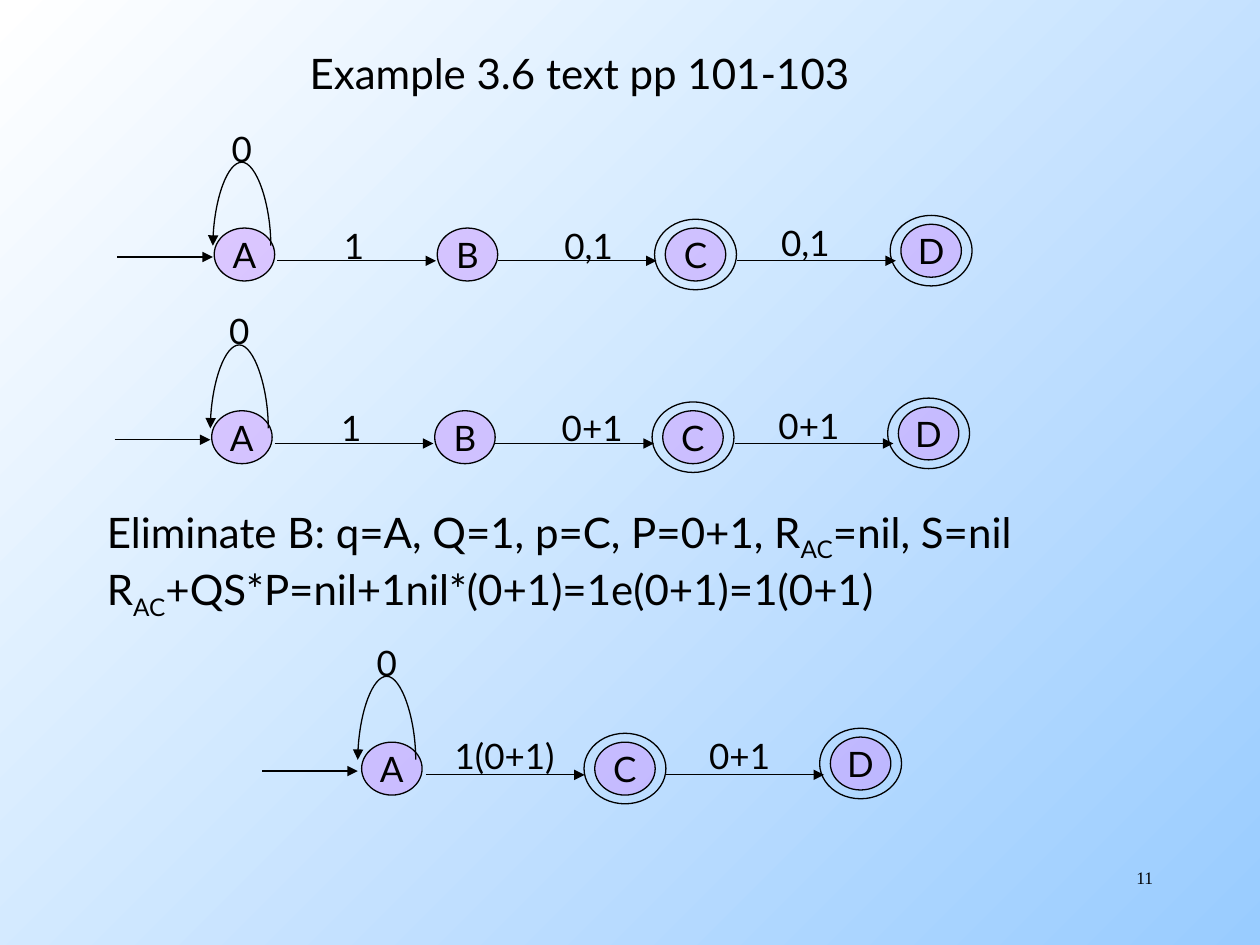
import pptx
import pptx.dml.color
import pptx.enum.shapes
import pptx.enum.text
import pptx.oxml
import pptx.oxml.ns
import pptx.util
from pptx.util import Inches

COLORS = {"ink": "000000", "state": "CC99FF", "sky_start": "FFFFFF", "sky_end": "99CCFF"}
FONT = "Lato"
TITLE = "Example 3.6 text pp 101-103"
PAGE = "11"

# Each line is a list of (text, is_subscript).
ELIMINATION = [
    [("Eliminate B: q=A, Q=1, p=C, P=0+1, R", False), ("AC", True), ("=nil, S=nil", False)],
    [("R", False), ("AC", True), ("+QS*P=nil+1nil*(0+1)=1e(0+1)=1(0+1)", False)],
]

# Offsets are measured from the top left corner of state A.
# states: name, dx, dy, accepting; edges: dx of start, label, label dx, label dy
FULL_STATES = [("A", 0, 0, False), ("B", 1.77, 0, False),
               ("C", 3.58, 0, True), ("D", 5.45, -0.03, True)]
AUTOMATA = [
    {"origin": (1.7, 1.81), "lead": 0, "states": FULL_STATES,
     "edges": [(0.5, "1", 0.93, -0.08), (2.25, "0,1", 2.68, -0.08),
               (4.15, "0,1", 4.4, -0.1)]},
    {"origin": (1.68, 3.26), "lead": 0, "states": FULL_STATES,
     "edges": [(0.5, "1", 0.93, -0.08), (2.25, "0+1", 2.68, -0.08),
               (4.15, "0+1", 4.4, -0.1)]},
    {"origin": (2.87, 5.89), "lead": -0.02,
     "states": [("A", 0, 0, False), ("C", 1.85, 0, True), ("D", 3.72, -0.04, True)],
     "edges": [(0.51, "1(0+1)", 0.64, -0.11), (2.41, "0+1", 2.66, -0.11)]},
]
LABEL_WIDTHS = {"0": 0.35, "1": 0.35, "0,1": 0.59, "0+1": 0.71, "1(0+1)": 1.08}
STATE_W, STATE_H = 0.48, 0.42
RING_W, RING_H = 0.65, 0.56
EDGE_LENGTH, ENTRY_LENGTH = 1.26, 0.76
LOOP_SPAN, LOOP_DEPTH, LOOP_RISE = 0.46, 0.0015, 0.63

prs = pptx.Presentation()
prs.slide_width, prs.slide_height = Inches(10), Inches(7.5)
slide = prs.slides.add_slide(prs.slide_layouts[6])
shapes = slide.shapes


def rgb(name):
    return pptx.dml.color.RGBColor.from_string(COLORS[name])


def style_run(run, size, font=FONT):
    run.font.size = pptx.util.Pt(size)
    run.font.name = font
    run.font.color.rgb = rgb("ink")


def add_text(lines, left, top, width, height, size, font=FONT, wrap=False):
    frame = shapes.add_textbox(*map(Inches, (left, top, width, height))).text_frame
    frame.word_wrap = wrap
    for i, line in enumerate(lines):
        paragraph = frame.paragraphs[0] if i == 0 else frame.add_paragraph()
        for text, subscript in line:
            run = paragraph.add_run()
            run.text = text
            style_run(run, size, font)
            if subscript:
                run.font._element.set("baseline", "-25000")
    return frame


def add_label(text, left, top):
    add_text([[(text, False)]], left, top, LABEL_WIDTHS[text], 0.44, 20)


def add_ellipse(left, top, width, height):
    ellipse = shapes.add_shape(pptx.enum.shapes.MSO_SHAPE.OVAL,
                               *map(Inches, (left, top, width, height)))
    ellipse.shadow.inherit = False
    ellipse.fill.background()
    ellipse.line.color.rgb = rgb("ink")
    ellipse.line.width = pptx.util.Pt(0.75)
    return ellipse


def add_state(name, left, top, accepting):
    if accepting:
        add_ellipse(left - (RING_W - STATE_W) / 2, top - (RING_H - STATE_H) / 2,
                    RING_W, RING_H)
    state = add_ellipse(left, top, STATE_W, STATE_H)
    state.fill.solid()
    state.fill.fore_color.rgb = rgb("state")
    color = state._element.spPr.find(".//" + pptx.oxml.ns.qn("a:srgbClr"))
    color.append(pptx.oxml.parse_xml(
        f'<a:alpha {pptx.oxml.ns.nsdecls("a")} val="50000"/>'))
    frame = state.text_frame
    frame.word_wrap = False
    frame.vertical_anchor = pptx.enum.text.MSO_ANCHOR.MIDDLE
    frame.text = name
    frame.paragraphs[0].alignment = pptx.enum.text.PP_ALIGN.CENTER
    style_run(frame.paragraphs[0].runs[0], 20)


def add_arrow(kind, x1, y1, x2, y2):
    arrow = shapes.add_connector(kind, *map(Inches, (x1, y1, x2, y2)))
    arrow.line.color.rgb = rgb("ink")
    arrow.line.width = pptx.util.Pt(0.75)
    namespace = pptx.oxml.ns.nsdecls("a")
    arrow.line._get_or_add_ln().append(
        pptx.oxml.parse_xml(f'<a:tailEnd {namespace} type="triangle"/>'))
    arrow._element.spPr.append(pptx.oxml.parse_xml(f"<a:effectLst {namespace}/>"))
    return arrow


def add_straight_arrow(left, y, length):
    add_arrow(pptx.enum.shapes.MSO_CONNECTOR.STRAIGHT, left, y, left + length, y)


def add_loop(left, y):
    """Curve from the right end up and over to the left end: a turned, flat connector."""
    middle = left + LOOP_SPAN / 2
    loop = add_arrow(pptx.enum.shapes.MSO_CONNECTOR.CURVE,
                     middle + LOOP_DEPTH / 2, y + LOOP_SPAN / 2,
                     middle - LOOP_DEPTH / 2, y - LOOP_SPAN / 2)
    properties = loop._element.spPr
    properties.find(pptx.oxml.ns.qn("a:xfrm")).set("rot", str(270 * 60000))
    bend = round(-LOOP_RISE / LOOP_DEPTH * 100000)
    guides = properties.find(".//" + pptx.oxml.ns.qn("a:avLst"))
    guides.append(pptx.oxml.parse_xml(
        f'<a:gd {pptx.oxml.ns.nsdecls("a")} name="adj1" fmla="val {bend}"/>'))


def add_automaton(origin, lead, states, edges):
    x, y = origin
    for name, dx, dy, accepting in states:
        add_state(name, x + dx, y + dy, accepting)
    add_straight_arrow(x + lead - 0.77, y + 0.23, ENTRY_LENGTH)
    add_loop(x + lead - 0.01, y + 0.14)
    add_label("0", x + lead + 0.04, y - 0.85)
    for start, label, dx, dy in edges:
        add_straight_arrow(x + start, y + 0.26, EDGE_LENGTH)
        add_label(label, x + dx, y + dy)


sky = slide.background.fill
sky.gradient()
sky.gradient_angle = 315
for stop, name in zip(sky.gradient_stops, ("sky_start", "sky_end")):
    stop.color.rgb = rgb(name)

add_text([[(TITLE, False)]], 2.36, 0.33, 4.51, 0.5, 24)
for automaton in AUTOMATA:
    add_automaton(**automaton)
add_text(ELIMINATION, 0.75, 3.97, 7.94, 0.91, 24)
page = add_text([[(PAGE, False)]], 7.17, 6.83, 2.08, 0.5, 10, "Times New Roman", wrap=True)
page.paragraphs[0].alignment = pptx.enum.text.PP_ALIGN.RIGHT

prs.save("out.pptx")
